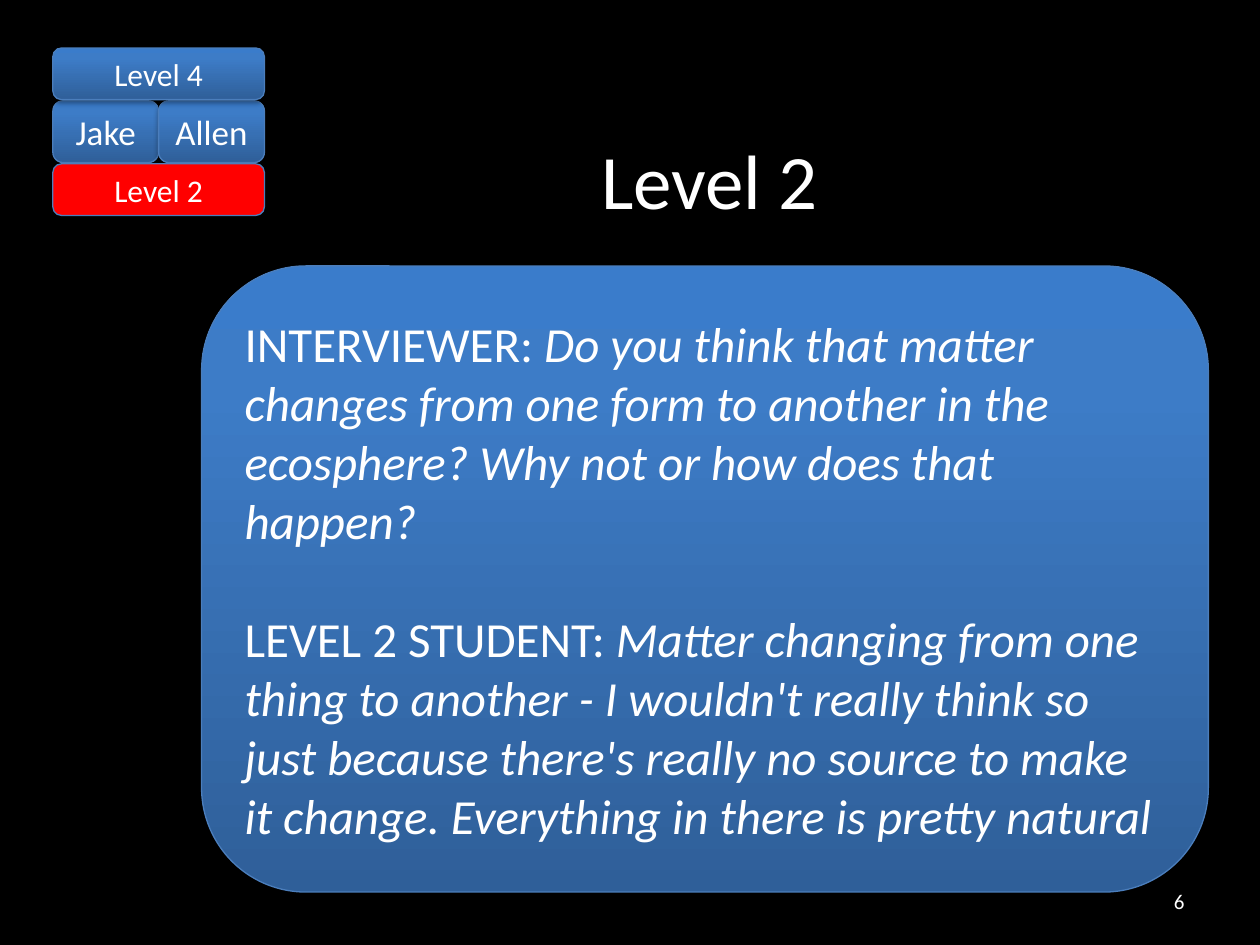
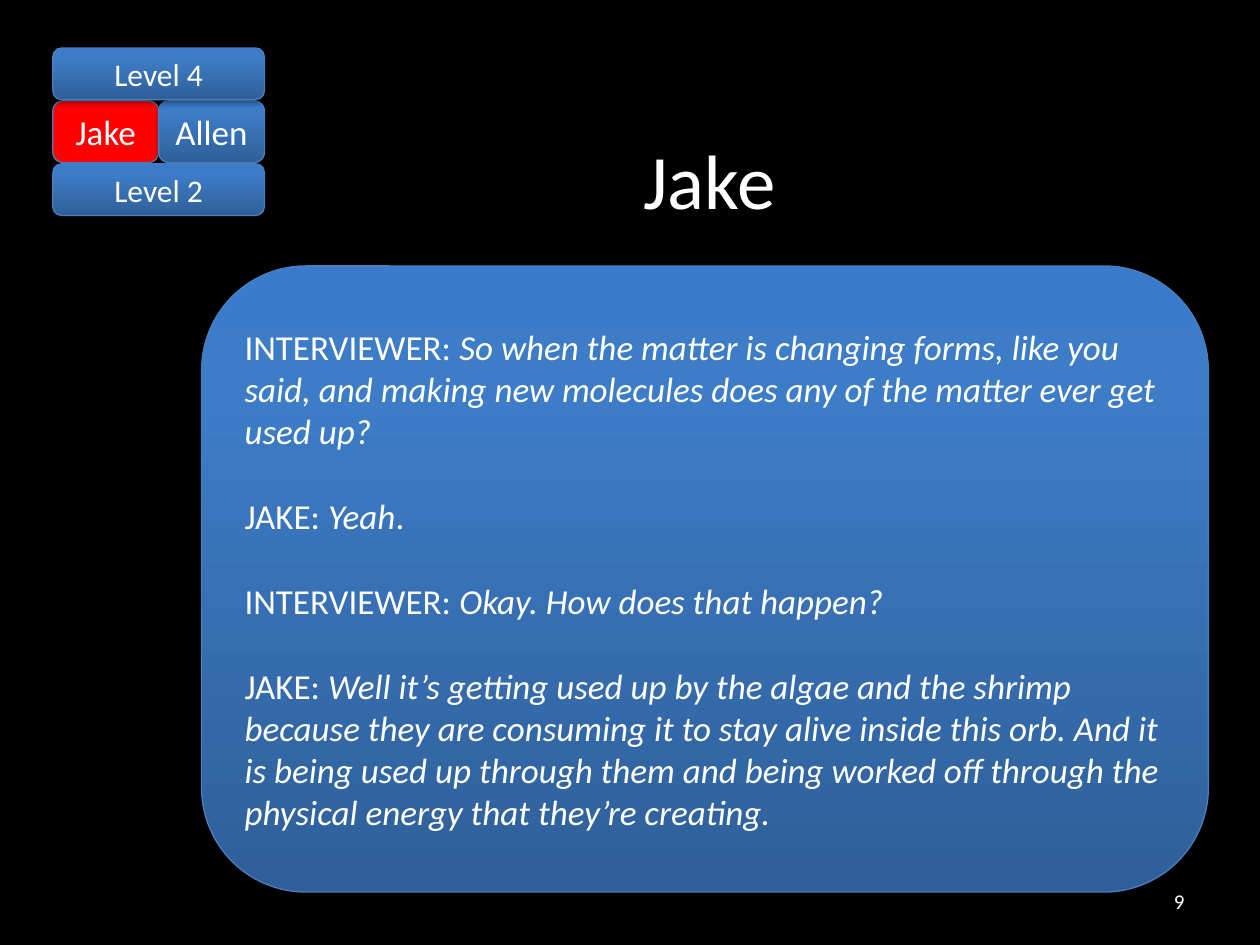
from copy import deepcopy

from lxml.etree import SubElement
from pptx import Presentation
from pptx.dml.color import RGBColor
from pptx.enum.shapes import MSO_SHAPE
from pptx.enum.text import MSO_ANCHOR, PP_ALIGN
from pptx.oxml.ns import qn
from pptx.util import Pt

COLORS = {
    "background": "000000",
    "text": "FFFFFF",
    "active": "FF0000",
    "outline": "4B7EBC",
    "shadow": "000000",
    "dark": "2F5F99",
    "mid": "3D7CC7",
    "light": "3A7CCB",
}
GRADIENT = [(0, "dark"), (0.8, "mid"), (1, "light")]
FONT = "Calibri"
LINE_HEIGHT = 1.22

# Navigation tiles: label, left, top, width, height, text size
NAV_LEFT, NAV_WIDTH = 30.2, 120.9
HALF = NAV_WIDTH / 2
TILES = [
    ("Jake", NAV_LEFT, 57.6, HALF, 35.3, 20),
    ("Allen", NAV_LEFT + HALF, 57.6, HALF, 35.3, 20),
    ("Level 4", NAV_LEFT, 27.4, NAV_WIDTH, 29.5, 18),
    ("Level 2", NAV_LEFT, 93.6, NAV_WIDTH, 29.5, 18),
]

# Each speech alternates upright and italic pieces.
SLIDES = [
    ("Level 2", 6, 28, [
        ("INTERVIEWER: ",
         "Do you think that matter changes from one form to another in the "
         "ecosphere? Why not or how does that happen?"),
        ("LEVEL 2 STUDENT: ",
         "Matter changing from one thing to another - I wouldn't really think "
         "so just because there's really no source to make it change. "
         "Everything in there is pretty natural"),
    ]),
    ("Jake", 9, 20, [
        ("INTERVIEWER: ",
         "So when the matter is changing forms, like you said, and making new "
         "molecules does any of the matter ever get used up?"),
        ("JAKE: ", "Yeah", "."),
        ("INTERVIEWER: ", "Okay. How does that happen?"),
        ("JAKE: ",
         "Well it’s getting used up by the algae and the shrimp because they "
         "are consuming it to stay alive inside this orb. And it is being used "
         "up through them and being worked off through the physical energy "
         "that they’re creating."),
    ]),
]


def rgb(name):
    return RGBColor.from_string(COLORS[name])


class Deck:
    def __init__(self):
        self.prs = Presentation()
        self.prs.slide_width, self.prs.slide_height = Pt(720), Pt(540)
        self.s = None

    def add_slide(self):
        self.s = self.prs.slides.add_slide(self.prs.slide_layouts[6])
        fill = self.s.background.fill
        fill.solid()
        fill.fore_color.rgb = rgb("background")

    def set_text(self, sp, speeches, size, align):
        """Fill a shape with one paragraph per speech, a line apart."""
        tf = sp.text_frame
        tf.word_wrap = True
        tf.vertical_anchor = MSO_ANCHOR.MIDDLE
        for i, pieces in enumerate(speeches):
            p = tf.add_paragraph() if i else tf.paragraphs[0]
            p.alignment = align
            if i:
                p.space_before = Pt(round(size * LINE_HEIGHT, 1))
            for j, piece in enumerate(pieces):
                r = p.add_run()
                r.text = piece
                r.font.name, r.font.size = FONT, Pt(size)
                r.font.italic = j % 2 == 1
                r.font.color.rgb = rgb("text")

    def label(self, text, left, top, width, height, size, align):
        sp = self.s.shapes.add_textbox(Pt(left), Pt(top), Pt(width), Pt(height))
        self.set_text(sp, [(text,)], size, align)

    def box(self, speeches, left, top, width, height, size,
            align=PP_ALIGN.CENTER, active=False):
        sp = self.s.shapes.add_shape(MSO_SHAPE.FLOWCHART_ALTERNATE_PROCESS,
                                     Pt(left), Pt(top), Pt(width), Pt(height))
        if active:
            sp.fill.solid()
            sp.fill.fore_color.rgb = rgb("active")
        else:
            self.shade(sp)
        sp.line.color.rgb = rgb("outline")
        sp.line.width = Pt(0.75)
        self.drop_shadow(sp)
        self.set_text(sp, speeches, size, align)

    def shade(self, sp):
        """Apply the three-stop gradient, dark at the bottom."""
        sp.fill.gradient()
        sp.fill.gradient_angle = 90
        stops = sp._element.spPr.find(".//" + qn("a:gsLst"))
        stops.append(deepcopy(stops[0]))
        for stop, (position, name) in zip(sp.fill.gradient_stops, GRADIENT):
            stop.position = position
            stop.color.rgb = rgb(name)

    def drop_shadow(self, sp):
        sp.shadow.inherit = False
        effects = sp._element.spPr.find(qn("a:effectLst"))
        shadow = SubElement(effects, qn("a:outerShdw"), blurRad=str(Pt(3.1)),
                            dist=str(Pt(1.8)), dir="5400000", rotWithShape="0")
        color = SubElement(shadow, qn("a:srgbClr"), val=COLORS["shadow"])
        SubElement(color, qn("a:alpha"), val="35000")

    def navigation(self, current):
        for text, left, top, width, height, size in TILES:
            self.box([(text,)], left, top, width, height, size,
                     active=text == current)


def main():
    deck = Deck()
    for title, number, size, speeches in SLIDES:
        deck.add_slide()
        deck.label(title, 121, 70.5, 569, 63.5, 44, PP_ALIGN.CENTER)
        deck.label(str(number), 516.2, 500.4, 167.8, 28.8, 12, PP_ALIGN.RIGHT)
        deck.box(speeches, 115.2, 152, 575.3, 357.8, size, PP_ALIGN.LEFT)
        deck.navigation(title)
    deck.prs.save("out.pptx")


if __name__ == "__main__":
    main()
